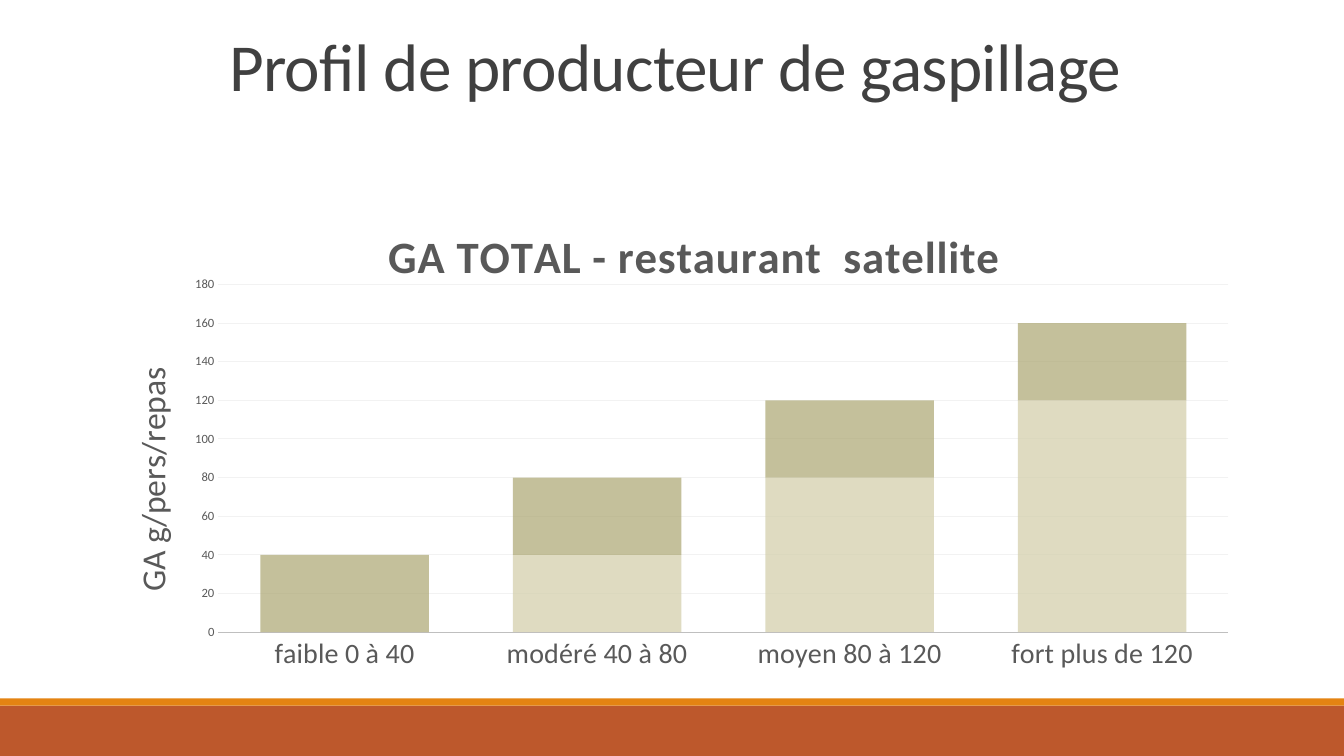
"""Build a slide with a stacked column chart of food waste profiles."""
from dataclasses import dataclass

from lxml.etree import SubElement
from pptx import Presentation
from pptx.chart.data import CategoryChartData
from pptx.dml.color import RGBColor
from pptx.enum.chart import XL_CHART_TYPE, XL_TICK_MARK
from pptx.enum.shapes import MSO_SHAPE
from pptx.enum.text import MSO_ANCHOR, MSO_AUTO_SIZE, PP_ALIGN
from pptx.oxml.ns import qn
from pptx.util import Emu, Pt


@dataclass(frozen=True)
class Theme:
    font: str = "Calibri"
    dark: str = "404040"
    gray: str = "595959"
    axis: str = "BFBFBF"
    grid: str = "F2F2F2"
    rust: str = "BD582C"
    gold: str = "E48312"
    pale: str = "D2CDA8"
    olive: str = "ACA671"
    alpha: int = 70
    head: int = 48
    title: int = 32
    unit: int = 24
    label: int = 20
    base: int = 10
    tick: int = 9


LOOK = Theme()
PX = 9525
SIZE = (1280, 720)
HEAD = "Profil de producteur de gaspillage"
NAME = "GA TOTAL - restaurant  satellite"
UNIT = "GA g/pers/repas"
CATS = ["faible 0 à 40", "modéré 40 à 80", "moyen 80 à 120", "fort plus de 120"]
STEP = 40
SERIES = [
    (NAME, [STEP * i for i in range(len(CATS))], LOOK.pale),
    ("Series 2", [STEP] * len(CATS), LOOK.olive),
]
BARS = [((0, 672, 1280, 48), LOOK.rust), ((0, 665, 1280, 7), LOOK.gold)]
HEAD_BOX = (115, 30, 1056, 153)
CHART_BOX = (88, 161, 1104, 488)
PLOT_BOX = (120, 110, 962, 331)
NAME_AT = (274, 46)
UNIT_AT = (30, 183)


def scale(box):
    return [Emu(n * PX) for n in box]


def style(font, size, color, bold=False):
    font.name = LOOK.font
    font.size = Pt(size)
    font.bold = bold
    font.color.rgb = RGBColor.from_string(color)


def write(frame, text, size, color, bold=False, space=0):
    para = frame.paragraphs[0]
    run = para.add_run()
    run.text = text
    style(run.font, size, color, bold)
    if space:
        run.font._element.set("spc", str(space))
    return para


def place(node, box, inner=False):
    area = node.find(qn("c:layout"))
    if area is None:
        area = node.makeelement(qn("c:layout"), {})
        node.insert(len(node.findall(qn("c:tx"))), area)
    rule = SubElement(area, qn("c:manualLayout"))
    if inner:
        SubElement(rule, qn("c:layoutTarget"), val="inner")
    for key in "xy":
        SubElement(rule, qn(f"c:{key}Mode"), val="edge")
    for key, part, whole in zip("xywh", box, CHART_BOX[2:] * 2):
        SubElement(rule, qn(f"c:{key}"), val=f"{part / whole:.4f}")


def add_bars(slide):
    for box, color in BARS:
        bar = slide.shapes.add_shape(MSO_SHAPE.RECTANGLE, *scale(box))
        bar.shadow.inherit = False
        bar.fill.solid()
        bar.fill.fore_color.rgb = RGBColor.from_string(color)
        bar.line.fill.background()


def add_head(slide):
    head = slide.shapes.title
    head.left, head.top, head.width, head.height = scale(HEAD_BOX)
    frame = head.text_frame
    frame.word_wrap = True
    frame.auto_size = MSO_AUTO_SIZE.NONE
    frame.vertical_anchor = MSO_ANCHOR.TOP
    para = write(frame, HEAD, LOOK.head, LOOK.dark, space=-50)
    para.alignment = PP_ALIGN.CENTER
    para.line_spacing = 0.85


def set_axes(chart):
    cat, val = chart.category_axis, chart.value_axis
    for axis, size in ((cat, LOOK.label), (val, LOOK.tick)):
        axis.major_tick_mark = axis.minor_tick_mark = XL_TICK_MARK.NONE
        style(axis.tick_labels.font, size, LOOK.gray)
    val.minimum_scale, val.maximum_scale, val.major_unit = 0, 180, 20
    val.has_major_gridlines = True
    val.format.line.fill.background()
    rules = ((cat.format.line, LOOK.axis), (val.major_gridlines.format.line, LOOK.grid))
    for line, color in rules:
        line.color.rgb = RGBColor.from_string(color)
        line.width = Pt(0.75)
    title = val.axis_title
    write(title.text_frame, UNIT, LOOK.unit, LOOK.gray)
    body = title.text_frame._txBody.bodyPr
    body.set("rot", "-5400000")
    body.set("vert", "horz")
    place(title._element, UNIT_AT)


def add_graph(slide):
    data = CategoryChartData()
    data.categories = CATS
    for name, vals, _ in SERIES:
        data.add_series(name, vals)
    kind = XL_CHART_TYPE.COLUMN_STACKED
    chart = slide.shapes.add_chart(kind, *scale(CHART_BOX), data).chart
    chart.font.name = LOOK.font
    chart.font.size = Pt(LOOK.base)
    chart.has_legend = False
    chart.has_title = True
    title = chart.chart_title
    title.include_in_layout = False
    write(title.text_frame, NAME, LOOK.title, LOOK.gray, True, 50)
    place(title._element, NAME_AT)
    place(chart._chartSpace.chart.plotArea, PLOT_BOX, True)
    plot = chart.plots[0]
    plot.gap_width, plot.overlap = 50, 100
    plot.vary_by_categories = False
    for part, (_, _, color) in zip(plot.series, SERIES):
        fill = part.format.fill
        fill.solid()
        fill.fore_color.rgb = RGBColor.from_string(color)
        tint = part._element.find(f".//{qn('a:srgbClr')}")
        SubElement(tint, qn("a:alpha"), val=str(LOOK.alpha * 1000))
    set_axes(chart)


def main():
    deck = Presentation()
    deck.slide_width, deck.slide_height = scale(SIZE)
    slide = deck.slides.add_slide(deck.slide_layouts[5])
    add_bars(slide)
    add_head(slide)
    add_graph(slide)
    deck.save("out.pptx")


if __name__ == "__main__":
    main()
